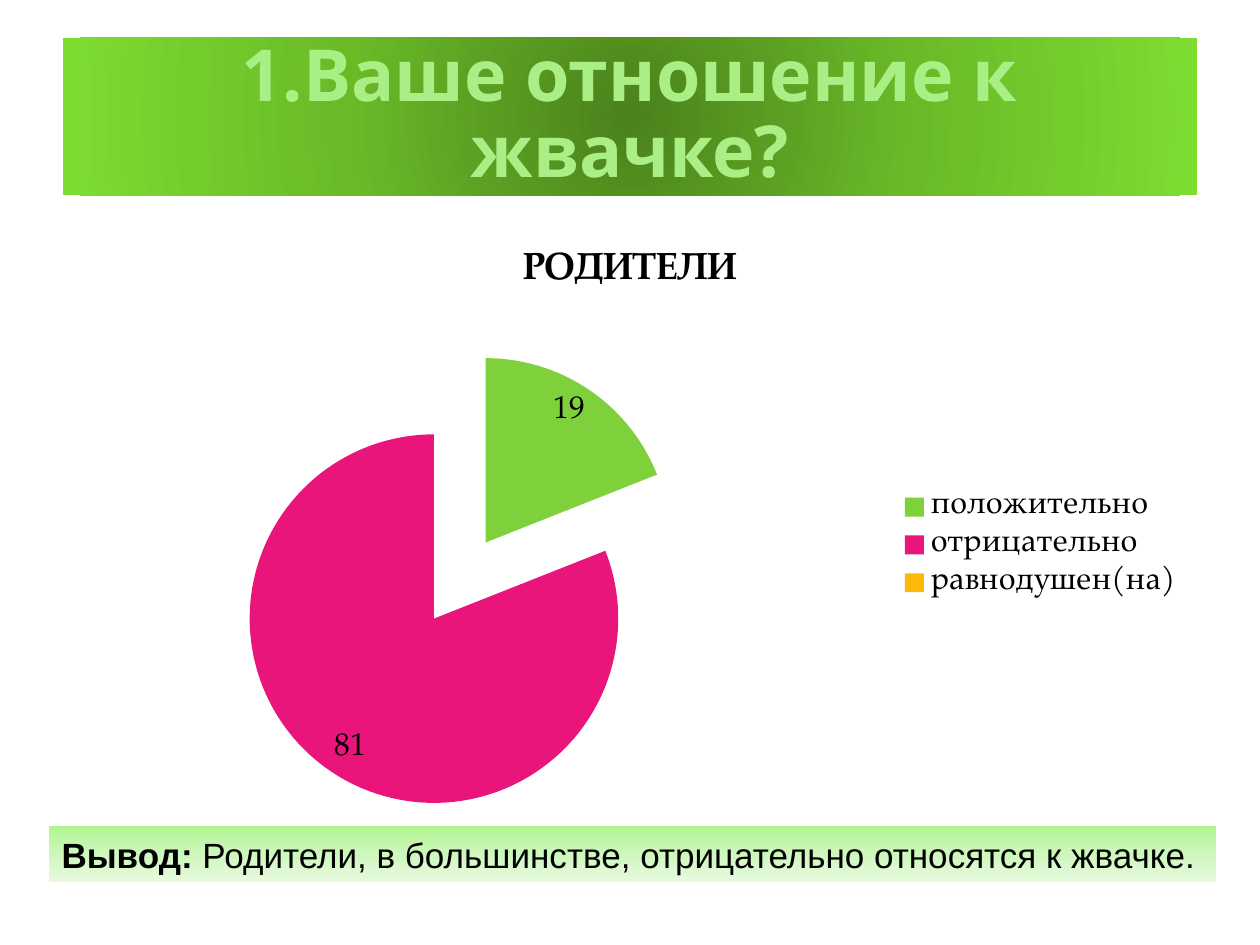
from lxml import etree
from pptx import Presentation
from pptx import util as u
from pptx.chart import data as chart_data
from pptx.dml.color import RGBColor
from pptx.enum import chart as ch, shapes, text
from pptx.oxml import ns, parse_xml

Inches, Pt = u.Inches, u.Pt

COLORS = {
    "title": "A9EF86", "text": "000000",
    "positive": "7FD13B", "negative": "EA157A", "neutral": "FEB80A",
}
TITLE_STOPS = {0: "4B821C", 50: "6ABA28", 100: "7EDC30"}
NOTE_STOPS = {0: "B2F592", 50: "CEF7BD", 100: "E7FADF"}
RADIAL = ('<a:path path="circle"><a:fillToRect l="50000" t="50000" '
          'r="50000" b="50000"/></a:path>')
VERTICAL = '<a:lin ang="5400000" scaled="0"/>'
CHART_FONT = "TeX Gyre Pagella"


def set_font(font, color, **values):
    for name, value in values.items():
        setattr(font, name, value)
    font.color.rgb = RGBColor.from_string(COLORS[color])


def fill_gradient(sp, stops, direction):
    """Swap the shape's fill for a gradient with any number of stops."""
    gs = "".join(f'<a:gs pos="{pos * 1000}"><a:srgbClr val="{rgb}"/></a:gs>'
                 for pos, rgb in stops.items())
    sp.fill.background()
    old = sp._element.spPr.find(ns.qn("a:noFill"))
    old.getparent().replace(old, parse_xml(
        f'<a:gradFill rotWithShape="1" {ns.nsdecls("a")}>'
        f'<a:gsLst>{gs}</a:gsLst>{direction}</a:gradFill>'))


def add_banner(s, box, stops, direction, runs, align, frame):
    """Gradient rectangle with one paragraph; runs are (text, font values)."""
    sp = s.shapes.add_shape(shapes.MSO_SHAPE.RECTANGLE, *map(Inches, box))
    sp.shadow.inherit = False
    sp.line.fill.background()
    fill_gradient(sp, stops, direction)
    tf = sp.text_frame
    for name, value in frame.items():
        setattr(tf, name, value)
    p = tf.paragraphs[0]
    p.alignment = align
    for words, values in runs:
        r = p.add_run()
        r.text = words
        set_font(r.font, **values)
    return p


def set_plot_layout(chart, x, y, w, h):
    plot_area = chart._chartSpace.chart.plotArea
    for old in plot_area.findall(ns.qn("c:layout")):
        plot_area.remove(old)
    layout = etree.Element(ns.qn("c:layout"))
    manual = etree.SubElement(layout, ns.qn("c:manualLayout"))
    values = {"layoutTarget": "inner", "xMode": "edge", "yMode": "edge",
              "x": x, "y": y, "w": w, "h": h}
    for name, value in values.items():
        etree.SubElement(manual, ns.qn(f"c:{name}")).set("val", str(value))
    plot_area.insert(0, layout)


def add_pie(s, box, title, slices, explosion):
    """Exploded pie; slices are (category, value, colour name)."""
    data = chart_data.CategoryChartData()
    data.categories = [name for name, _, _ in slices]
    data.add_series(title, [value for _, value, _ in slices])
    chart = s.shapes.add_chart(ch.XL_CHART_TYPE.PIE, *map(Inches, box), data).chart
    set_font(chart.font, "text", name=CHART_FONT, size=Pt(18))

    # Title and legend
    chart.has_title = True
    tf = chart.chart_title.text_frame
    tf.text = title
    set_font(tf.paragraphs[0].runs[0].font, "text",
             name=CHART_FONT, size=Pt(21.6), bold=True)
    chart.chart_title.include_in_layout = False
    chart.has_legend = True
    chart.legend.position = ch.XL_LEGEND_POSITION.RIGHT
    chart.legend.include_in_layout = False
    set_plot_layout(chart, 0.05, 0.2, 0.6, 0.71)

    # Slices
    plot = chart.plots[0]
    plot.vary_by_categories = True
    series = plot.series[0]
    for i, (_, _, color) in enumerate(slices):
        fill = series.points[i].format.fill
        fill.solid()
        fill.fore_color.rgb = RGBColor.from_string(COLORS[color])
    burst = etree.Element(ns.qn("c:explosion"))
    burst.set("val", str(explosion))
    series._element.find(ns.qn("c:dPt")).addprevious(burst)

    # Value labels; the number format hides zero
    plot.has_data_labels = True
    labels = {"show_value": True, "show_percentage": False,
              "number_format": "0;;", "number_format_is_linked": False,
              "position": ch.XL_LABEL_POSITION.INSIDE_END}
    for name, value in labels.items():
        setattr(plot.data_labels, name, value)


def main():
    prs = Presentation()
    prs.slide_width, prs.slide_height = Inches(10), Inches(7.5)
    s = prs.slides.add_slide(prs.slide_layouts[6])
    middle = text.MSO_ANCHOR.MIDDLE

    # Question
    title_font = dict(color="title", name="Open Sans", size=Pt(41), bold=True)
    p = add_banner(s, (0.5, 0.3, 9, 1.25), TITLE_STOPS, RADIAL,
                   [("1.Ваше отношение к жвачке?", title_font)],
                   text.PP_ALIGN.CENTER,
                   dict(word_wrap=True, vertical_anchor=middle,
                        margin_left=Inches(0.2), margin_right=Inches(0.2)))
    p.line_spacing = 0.88

    # Answers
    add_pie(s, (0.5, 1.75, 9, 5.15), "РОДИТЕЛИ",
            [("положительно", 19, "positive"),
             ("отрицательно", 81, "negative"),
             ("равнодушен(на)", 0, "neutral")], explosion=25)

    # Conclusion
    note_font = dict(color="text", name="Arial", size=Pt(20))
    add_banner(s, (0.39, 6.56, 9.26, 0.44), NOTE_STOPS, VERTICAL,
               [("Вывод:", dict(note_font, bold=True)),
                (" Родители, в большинстве, отрицательно относятся к жвачке.",
                 dict(note_font, bold=False))],
               text.PP_ALIGN.LEFT,
               dict(word_wrap=False, vertical_anchor=middle,
                    auto_size=text.MSO_AUTO_SIZE.SHAPE_TO_FIT_TEXT))

    prs.save("out.pptx")


if __name__ == "__main__":
    main()
